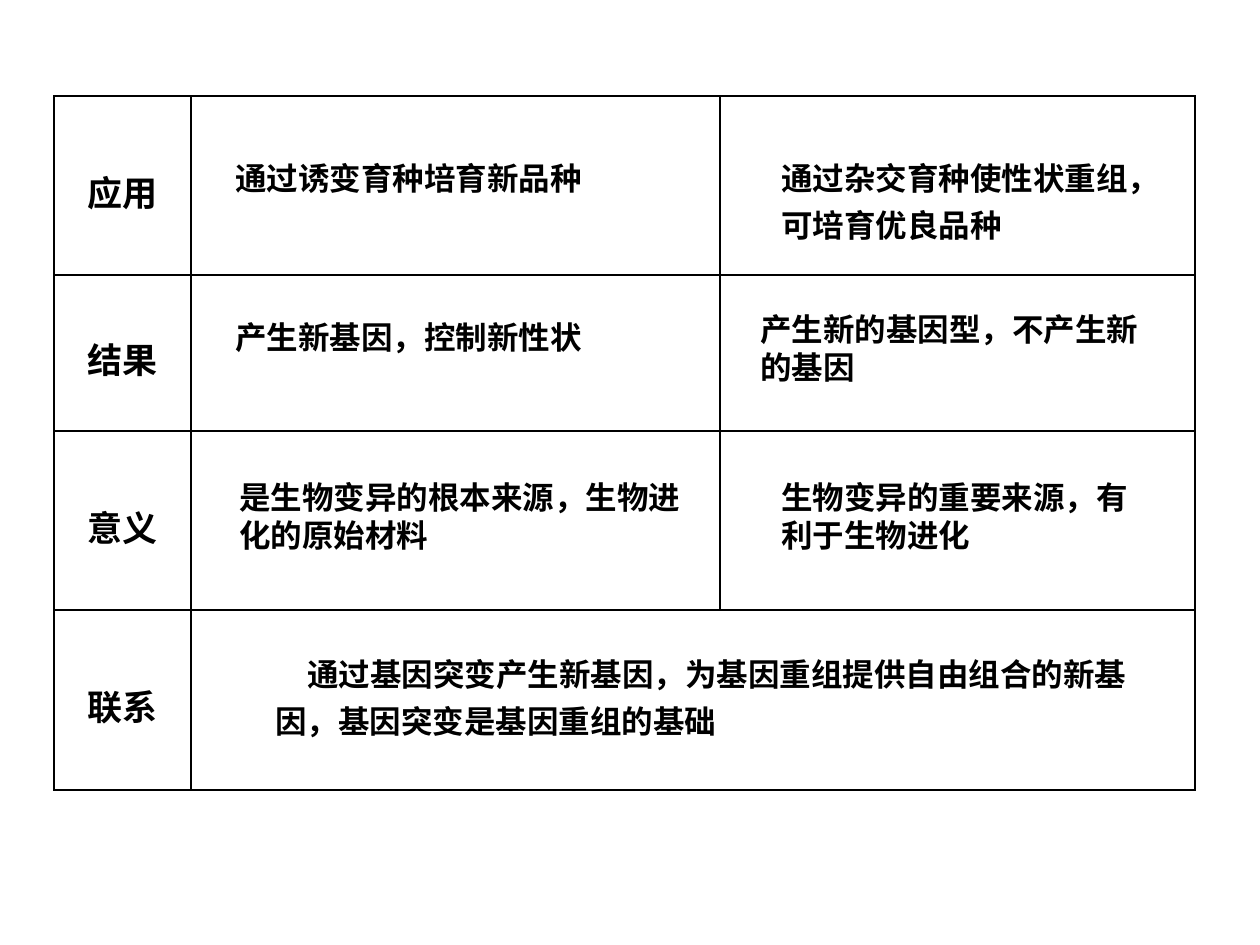
from lxml.etree import SubElement as Sub
from pptx import Presentation
from pptx.dml.color import RGBColor
from pptx.enum.text import MSO_ANCHOR as Anchor, MSO_AUTO_SIZE as Fit, PP_ALIGN as Align
from pptx.oxml.ns import qn
from pptx.util import Emu, Pt

SCALE = 914400 / 126
FONT = "Times New Roman"
INK = "000000"
COLS = [137, 529, 475]
ROWS = [179, 156, 179, 180]
HEADS = ["应用", "结果", "意义", "联系"]
NOTES = [
    (169, 49, 486, 55, 1.22, 0, "通过诱变育种培育新品种"),
    (715, 49, 397, 102, 1.22, 0, "通过杂交育种使性状重组，可培育优良品种"),
    (169, 208, 486, 55, 1.22, 0, "产生新基因，控制新性状"),
    (694, 208, 417, 89, None, 0, "产生新的基因型，不产生新的基因"),
    (173, 376, 466, 89, None, 0, "是生物变异的根本来源，生物进化的原始材料"),
    (715, 376, 377, 89, None, 0, "生物变异的重要来源，有利于生物进化"),
    (209, 545, 883, 102, 1.22, 32,
     "通过基因突变产生新基因，为基因重组提供自由组合的新基因，基因突变是基因重组的基础"),
]


def px(num):
    return Emu(round(num * SCALE))


def color(code):
    return RGBColor.from_string(code)


def write(para, text, size, lead):
    if lead:
        para.line_spacing = lead
    run = para.add_run()
    run.text = text
    font = run.font
    font.name, font.size, font.bold = FONT, Pt(size), True
    font.color.rgb = color(INK)


def frame(cell):
    props = cell._tc.get_or_add_tcPr()
    for side in ("lnL", "lnR", "lnT", "lnB"):
        line = Sub(props, qn("a:" + side), w=str(Pt(1)))
        fill = Sub(line, qn("a:solidFill"))
        Sub(fill, qn("a:srgbClr"), val=INK)
    cell.fill.background()


def add_grid(slide, left, top):
    table = slide.shapes.add_table(
        len(ROWS), len(COLS), px(left), px(top), px(sum(COLS)), px(sum(ROWS))
    ).table
    table.first_row = table.horz_banding = False
    for col, wide in zip(table.columns, COLS):
        col.width = px(wide)
    for row, high in zip(table.rows, ROWS):
        row.height = px(high)
    for cell in table.iter_cells():
        frame(cell)
    for num, head in enumerate(HEADS):
        cell = table.cell(num, 0)
        cell.vertical_anchor = Anchor.MIDDLE
        para = cell.text_frame.paragraphs[0]
        para.alignment = Align.CENTER
        write(para, head, 20, 1.22)
    last = len(ROWS) - 1
    table.cell(last, 1).merge(table.cell(last, 2))


def add_notes(slide, left, top):
    for x, y, wide, high, lead, inset, text in NOTES:
        box = slide.shapes.add_textbox(px(left + x), px(top + y), px(wide), px(high))
        body = box.text_frame
        body.word_wrap = True
        body.auto_size = Fit.SHAPE_TO_FIT_TEXT
        para = body.paragraphs[0]
        if inset:
            props = para._p.get_or_add_pPr()
            props.set("marL", "0")
            props.set("indent", str(px(inset)))
        write(para, text, 18, lead)


def main():
    deck = Presentation()
    deck.slide_width, deck.slide_height = px(1260), px(945)
    slide = deck.slides.add_slide(deck.slide_layouts[6])
    add_grid(slide, 54, 96)
    add_notes(slide, 54, 96)
    deck.save("out.pptx")


if __name__ == "__main__":
    main()
